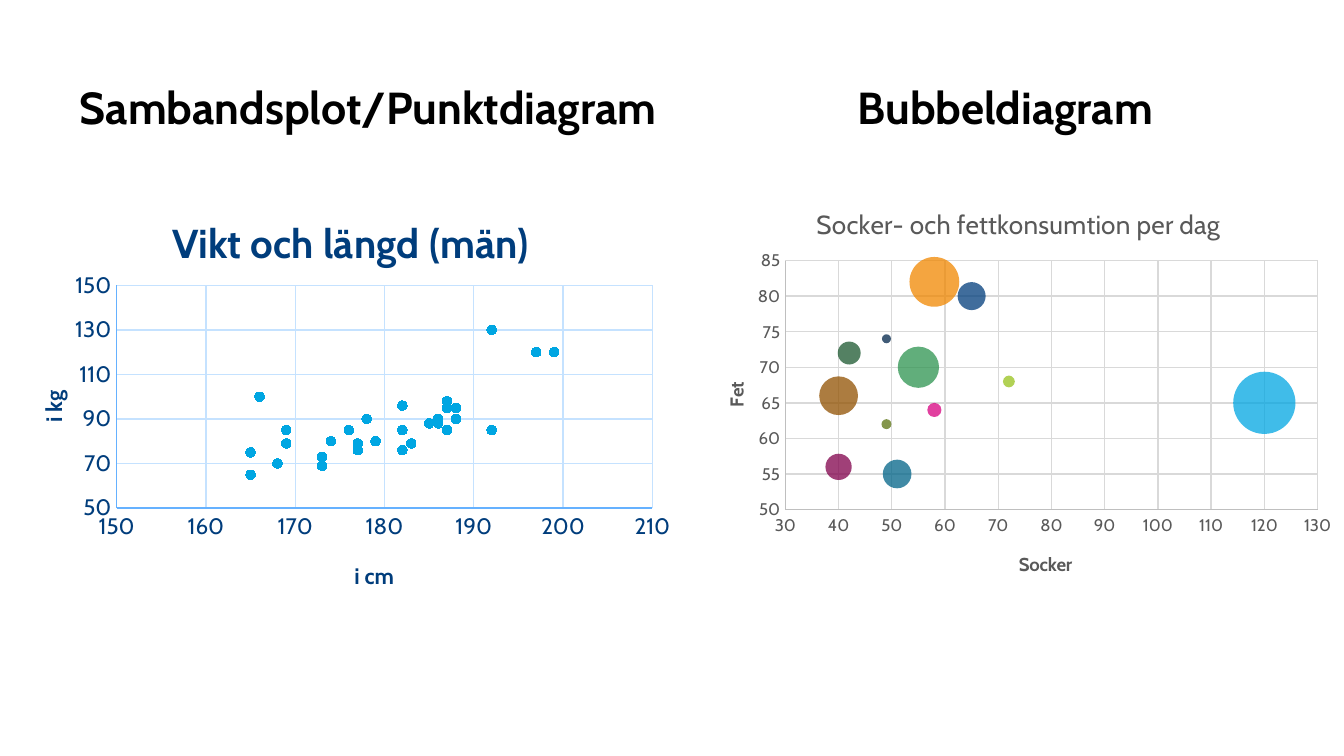
from dataclasses import dataclass
from lxml.etree import SubElement
from pptx import Presentation
from pptx.chart.data import BubbleChartData, XyChartData
from pptx.dml.color import RGBColor
from pptx.enum.chart import XL_CHART_TYPE as ChartType, XL_MARKER_STYLE as Marker, XL_TICK_MARK as TickMark
from pptx.enum.text import PP_ALIGN as Align
from pptx.oxml.ns import qn
from pptx.util import Cm, Pt


@dataclass
class ChartLook:
    text: str
    axis: str
    grid: str
    title_size: float
    title_bold: bool
    axis_title_size: float
    tick_size: float


class Theme:
    font = "Cabin"
    heading = "000000"
    heading_size = 24
    dot = "00A6E2"
    dot_size = 5
    line_width = 0.75
    bubble_alpha = 75000
    scatter = ChartLook("003D7C", "65B1FF", "C5E2FF", 21.6, True, 12, 12)
    bubble = ChartLook("595959", "BFBFBF", "D9D9D9", 14, False, 10, 9)


def place(element, **position):
    old_layout = element.find(qn("c:layout"))
    if old_layout is not None:
        element.remove(old_layout)
    layout = SubElement(element, qn("c:layout"))
    element.insert(1 if element.find(qn("c:tx")) is not None else 0, layout)
    manual = SubElement(layout, qn("c:manualLayout"))
    if "w" in position:
        SubElement(manual, qn("c:layoutTarget")).set("val", "inner")
    for side in ("x", "y"):
        SubElement(manual, qn(f"c:{side}Mode")).set("val", "edge")
    for name, value in position.items():
        SubElement(manual, qn(f"c:{name}")).set("val", str(value))


def write(text_frame, text, size, bold, color):
    text_frame.text = text
    font = text_frame.paragraphs[0].runs[0].font
    font.name = Theme.font
    font.size = Pt(size)
    font.bold = bold
    font.color.rgb = RGBColor.from_string(color)


presentation = Presentation()
presentation.slide_width = Cm(25.4)
presentation.slide_height = Cm(14.29)
slide = presentation.slides.add_slide(presentation.slide_layouts[6])

for left, heading in ((1.22, "Sambandsplot/Punktdiagram"), (13.26, "Bubbeldiagram")):
    text_frame = slide.shapes.add_textbox(Cm(left), Cm(1.5), Cm(11.48), Cm(1.42)).text_frame
    text_frame.word_wrap = True
    text_frame.margin_left = text_frame.margin_right = 0
    write(text_frame, heading, Theme.heading_size, True, Theme.heading)
    text_frame.paragraphs[0].alignment = Align.CENTER
    text_frame.paragraphs[0].line_spacing = 0.9

lengths_and_weights = [
    (176, 85), (188, 90), (185, 88), (169, 79), (182, 85), (187, 85),
    (183, 79), (192, 130), (177, 79), (174, 80), (179, 80), (199, 120),
    (188, 95), (186, 90), (187, 95), (182, 96), (187, 98), (168, 70),
    (173, 69), (177, 76), (165, 65), (192, 85), (186, 88), (173, 73),
    (182, 76), (197, 120), (166, 100), (169, 85), (178, 90), (165, 75),
]
scatter_data = XyChartData()
series_data = scatter_data.add_series("Series 1")
for length, weight in lengths_and_weights:
    series_data.add_data_point(length, weight)

sugar_fat_size_color = [
    (120, 65, 330, "00A6E2"), (65, 80, 67, "003D7C"), (72, 68, 12, "98C21D"),
    (58, 64, 17, "D7007F"), (58, 82, 211, "F18700"), (51, 55, 70, "006488"),
    (49, 74, 7, "00254A"), (49, 62, 8.5, "5B7411"), (55, 70, 145, "2D934F"),
    (42, 72, 45, "1B582F"), (40, 56, 59, "81004C"), (40, 66, 128, "915100"),
]
bubble_data = BubbleChartData()
for number, (sugar, fat, size, color) in enumerate(sugar_fat_size_color, 1):
    bubble_data.add_series(f"Series {number}").add_data_point(sugar, fat, size)

scatter = slide.shapes.add_chart(
    ChartType.XY_SCATTER, Cm(0), Cm(3.33), Cm(12.98), Cm(8.26), scatter_data).chart
bubble = slide.shapes.add_chart(
    ChartType.BUBBLE, Cm(12.98), Cm(3.33), Cm(12.42), Cm(7.98), bubble_data).chart

charts = [
    (scatter, Theme.scatter, "Vikt och längd (män)", (0.24, 0.07), (0.17, 0.25, 0.78, 0.51),
     [("i cm", 150, 210, 10, (0.51, 0.87)), ("i kg", 50, 150, 20, (0.05, 0.48))]),
    (bubble, Theme.bubble, "Socker- och fettkonsumtion per dag", (0.19, 0.06), (0.15, 0.2, 0.81, 0.59),
     [("Socker", 30, 130, 10, (0.5, 0.88)), ("Fet", 50, 85, 5, (0.05, 0.48))]),
]
for chart, look, title, title_spot, plot_spot, axes in charts:
    chart.has_legend = False
    chart.font.name = Theme.font
    chart.font.size = Pt(10)
    write(chart.chart_title.text_frame, title, look.title_size, look.title_bold, look.text)
    place(chart.chart_title._element, **dict(zip("xy", title_spot)))
    place(chart._chartSpace.chart.plotArea, **dict(zip("xywh", plot_spot)))
    for axis, (name, low, high, step, spot) in zip((chart.category_axis, chart.value_axis), axes):
        axis.minimum_scale = low
        axis.maximum_scale = high
        axis.major_unit = step
        axis.major_tick_mark = axis.minor_tick_mark = TickMark.NONE
        axis.has_major_gridlines = True
        for line, color in ((axis.format.line, look.axis), (axis.major_gridlines.format.line, look.grid)):
            line.color.rgb = RGBColor.from_string(color)
            line.width = Pt(Theme.line_width)
        axis.tick_labels.font.name = Theme.font
        axis.tick_labels.font.size = Pt(look.tick_size)
        axis.tick_labels.font.color.rgb = RGBColor.from_string(look.text)
        write(axis.axis_title.text_frame, name, look.axis_title_size, True, look.text)
        place(axis.axis_title._element, **dict(zip("xy", spot)))
    chart.value_axis.axis_title.text_frame._txBody.bodyPr.set("rot", "-5400000")

scatter.plots[0].vary_by_categories = False
dots = scatter.plots[0].series[0]
dots.smooth = False
dots.format.line.fill.background()
dots.marker.style = Marker.CIRCLE
dots.marker.size = Theme.dot_size
dots.marker.format.fill.solid()
dots.marker.format.fill.fore_color.rgb = RGBColor.from_string(Theme.dot)
dots.marker.format.line.color.rgb = RGBColor.from_string(Theme.dot)

for series, (sugar, fat, size, color) in zip(bubble.plots[0].series, sugar_fat_size_color):
    series.format.line.fill.background()
    series.format.fill.solid()
    series.format.fill.fore_color.rgb = RGBColor.from_string(color)
    fill_color = series._element.spPr.find(qn("a:solidFill")).find(qn("a:srgbClr"))
    SubElement(fill_color, qn("a:alpha")).set("val", str(Theme.bubble_alpha))

presentation.save("out.pptx")
